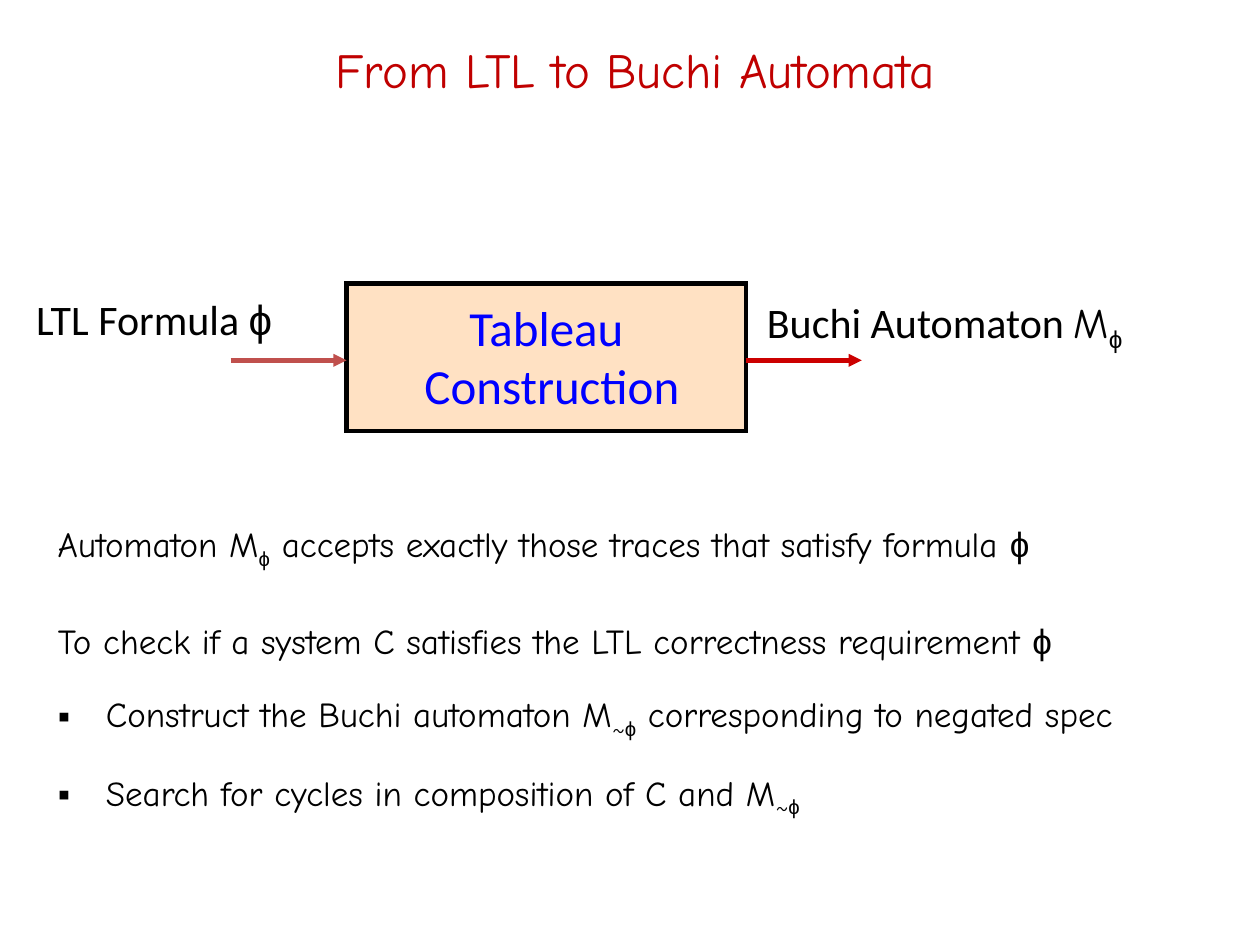
from dataclasses import dataclass

from lxml.etree import SubElement as Sub
from pptx import Presentation
from pptx.dml.color import RGBColor as Rgb
from pptx.enum.shapes import MSO_CONNECTOR as Conn, MSO_SHAPE as Kind
from pptx.enum.text import MSO_ANCHOR as Anchor, MSO_AUTO_SIZE as Auto, PP_ALIGN as Align
from pptx.oxml.ns import qn
from pptx.util import Inches, Pt


@dataclass(frozen=True)
class Theme:
    black: str = "000000"
    title: str = "C00000"
    blue: str = "0000FF"
    peach: str = "FFCC99"
    rose: str = "C0504D"
    red: str = "CC0000"
    big: int = 28
    mid: int = 24
    small: int = 20
    hand: str = "Comic Neue"
    sans: str = "Calibri"
    greek: str = "Arial"
    edge: float = 2.5


THEME = Theme()
PHI = ("ϕ", THEME.greek)
SUB_PHI = ("ϕ", THEME.greek, True)
NOT_PHI = [("~", THEME.hand, True), SUB_PHI]


def apply(item, form):
    for name, value in form.items():
        setattr(item, name, value)


def place(shape, at):
    names = ("left", "top", "width", "height")
    apply(shape, dict(zip(names, map(Inches, at))))


def write(para, runs, size, color):
    """Each run is (text, font) or (text, font, True) for a subscript."""
    for text, face, *low in runs:
        run = para.add_run()
        run.text = text
        apply(run.font, {"name": face, "size": Pt(size)})
        run.font.color.rgb = Rgb.from_string(color)
        if low:
            run._r.get_or_add_rPr().set("baseline", "-25000")


def fill_text(shape, rows, size, color, frame, form):
    body = shape.text_frame
    apply(body, frame)
    for i, runs in enumerate(rows):
        para = body.add_paragraph() if i else body.paragraphs[0]
        apply(para, form)
        write(para, runs, size, color)
    return body.paragraphs


def add_text(slide, at, rows, size, color, frame, form):
    box = slide.shapes.add_textbox(*map(Inches, at))
    return fill_text(box, rows, size, color, frame, form)


def set_line(shape, color):
    shape.line.color.rgb = Rgb.from_string(color)
    shape.line.width = Pt(THEME.edge)
    return shape.line._get_or_add_ln()


def add_box(slide, at):
    box = slide.shapes.add_shape(Kind.RECTANGLE, *map(Inches, at))
    box.shadow.inherit = False
    box.fill.solid()
    box.fill.fore_color.rgb = Rgb.from_string(THEME.peach)
    tint = box._element.spPr.find(qn("a:solidFill"))[0]
    Sub(tint, qn("a:alpha"), val="58000")
    Sub(set_line(box, THEME.black), qn("a:miter"), lim="800000")


def add_arrow(slide, start, end, y, color):
    ends = map(Inches, (start, y, end, y))
    arrow = slide.shapes.add_connector(Conn.STRAIGHT, *ends)
    Sub(set_line(arrow, color), qn("a:tailEnd"), type="triangle")
    Sub(arrow._element.spPr, qn("a:effectLst"))


def set_mark(para, mark=None):
    """Give a paragraph a hanging bullet, or none."""
    props = para._p.get_or_add_pPr()
    gap = Inches(0.38) if mark else 0
    for name, value in {"marL": gap, "indent": -gap}.items():
        props.set(name, str(value))
    if mark:
        Sub(props, qn("a:buFont"), typeface=THEME.greek)
        Sub(props, qn("a:buChar"), char=mark)
    else:
        Sub(props, qn("a:buNone"))


def draw_flow(slide):
    left, top, wide, high = 2.75, 2.25, 3.17, 1.17
    right, flow, reach = left + wide, 2.86, 0.92
    add_box(slide, (left, top, wide, high))

    # Arrows in and out, just below the middle of the box
    add_arrow(slide, left - reach, left, flow, THEME.rose)
    add_arrow(slide, right, right + reach, flow, THEME.red)

    # Labels
    form = {"alignment": Align.CENTER}
    tight = {"word_wrap": False, "auto_size": Auto.SHAPE_TO_FIT_TEXT,
             "vertical_anchor": Anchor.MIDDLE}
    source = [("LTL Formula ", THEME.sans), ("ϕ ", THEME.greek)]
    result = [("Buchi Automaton ", THEME.sans), ("M", THEME.hand),
              ("ϕ ", THEME.greek, True)]
    for at, runs in (((0.18, 2.28, 2.18, 0.5), source),
                     ((5.91, 2.33, 3.23, 0.5), result)):
        add_text(slide, at, [runs], THEME.mid, THEME.black, tight, form)

    # Name of the step
    rows = [[("Tableau ", THEME.sans)], [("Construction", THEME.sans)]]
    frame = {"word_wrap": True, "vertical_anchor": Anchor.MIDDLE}
    add_text(slide, (2.59, 2.24, 3.58, high), rows, THEME.big, THEME.blue,
             frame, form)


def draw_notes(slide, body):
    left, wide = 0.36, 9.42
    frame = {"word_wrap": True, "auto_size": Auto.NONE}
    form = {"line_spacing": 1.5, "space_before": Pt(0)}

    # Claim
    claim = [("Automaton M", THEME.hand), SUB_PHI,
             (" accepts exactly those traces that satisfy formula ", THEME.hand),
             PHI]
    add_text(slide, (left, 3.91, wide, 0.58), [claim], THEME.small, THEME.black,
             frame, form)

    # Check and its steps
    rows = [
        [("To check if a system C satisfies the LTL correctness requirement ",
          THEME.hand), PHI],
        [("Construct the Buchi automaton M", THEME.hand), *NOT_PHI,
         (" corresponding to negated spec", THEME.hand)],
        [("Search for cycles in composition of C and M", THEME.hand), *NOT_PHI],
    ]
    place(body, (left, 4.7, wide, 1.8))
    head, *steps = fill_text(body, rows, THEME.small, THEME.black, frame, form)
    set_mark(head)
    for step in steps:
        set_mark(step, "▪")
        step.space_before = Pt(4)


def main():
    deck = Presentation()
    apply(deck, {"slide_width": Inches(10), "slide_height": Inches(7.5)})
    slide = deck.slides.add_slide(deck.slide_layouts[1])

    # Title
    title = slide.shapes.title
    place(title, (0.75, 0.16, 8.58, 0.78))
    fill_text(title, [[("From LTL to Buchi Automata", THEME.hand)]], THEME.big,
              THEME.title, {"vertical_anchor": Anchor.MIDDLE},
              {"alignment": Align.CENTER})

    draw_flow(slide)
    draw_notes(slide, slide.placeholders[1])
    deck.save("out.pptx")


if __name__ == "__main__":
    main()
